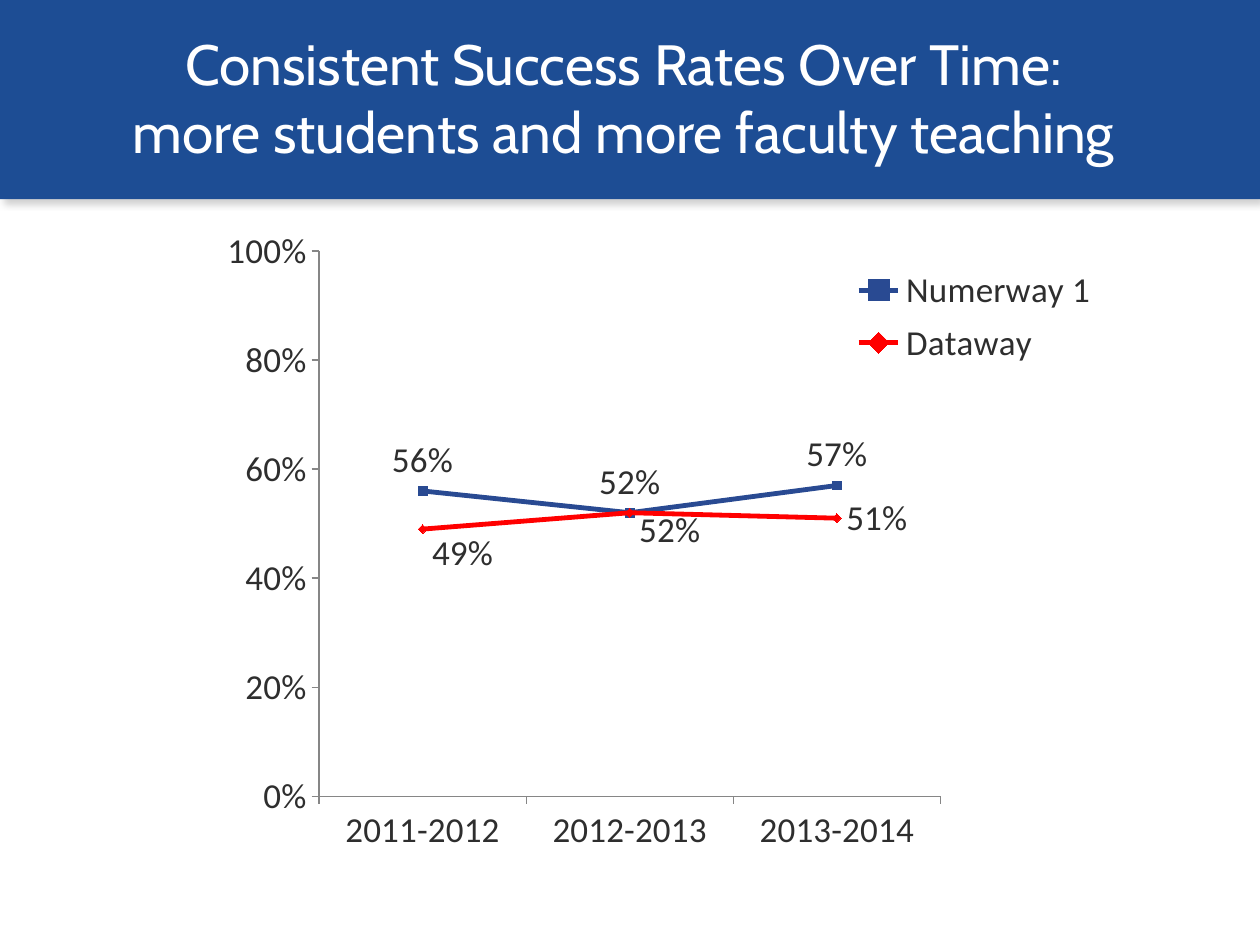
from dataclasses import dataclass

from lxml.etree import SubElement
from pptx import Presentation
from pptx.chart.data import CategoryChartData
from pptx.dml.color import RGBColor
from pptx.enum.chart import XL_CHART_TYPE as ChartType
from pptx.enum.chart import XL_LABEL_POSITION as LabelPos
from pptx.enum.chart import XL_LEGEND_POSITION as LegendPos
from pptx.enum.chart import XL_TICK_MARK as Tick
from pptx.enum.shapes import MSO_SHAPE as Shape
from pptx.enum.text import MSO_ANCHOR as Anchor
from pptx.enum.text import PP_ALIGN as Align
from pptx.oxml import parse_xml
from pptx.oxml.ns import nsdecls, qn
from pptx.util import Inches, Pt

BLUE = RGBColor(0x1D, 0x4D, 0x94)
LINE_BLUE = RGBColor(0x29, 0x4A, 0x92)
RED = RGBColor(0xFF, 0x00, 0x00)
INK = RGBColor(0x2E, 0x2E, 0x2E)
GREY = RGBColor(0x86, 0x86, 0x86)
WHITE = RGBColor(0xFF, 0xFF, 0xFF)

TITLE = ("Consistent Success Rates Over Time:", "more students and more faculty teaching")
YEARS = ("2011-2012", "2012-2013", "2013-2014")
TEXT_SIZE = Pt(20)


@dataclass(frozen=True)
class Rate:
    name: str
    values: tuple[float, ...]
    color: RGBColor
    label_pos: LabelPos
    label_drops: tuple[float, ...] = ()


RATES = (
    Rate("Numerway 1", (0.56, 0.52, 0.57), LINE_BLUE, LabelPos.ABOVE),
    Rate("Dataway", (0.49, 0.52, 0.51), RED, LabelPos.RIGHT, (0.037, 0.026)),
)


def add_layout(parent, index: int, **parts: str | float) -> None:
    for old in parent.findall(qn("c:layout")):
        parent.remove(old)
    layout = parse_xml(f"<c:layout {nsdecls('c')}/>")
    manual = SubElement(layout, qn("c:manualLayout"))
    for tag, value in parts.items():
        SubElement(manual, qn(f"c:{tag}")).set("val", str(value))
    parent.insert(index, layout)


def add_banner(s) -> None:
    sp = s.shapes.add_shape(Shape.RECTANGLE, 0, 0, Inches(10), Inches(1.58))
    sp.shadow.inherit = False
    sp.fill.solid()
    sp.fill.fore_color.rgb = BLUE
    sp.line.fill.background()
    effects = sp._element.spPr.find(qn("a:effectLst"))
    effects.append(parse_xml(
        f'<a:outerShdw {nsdecls("a")} blurRad="{Pt(4.5)}" dist="{Pt(3)}" dir="2700000" rotWithShape="0">'
        '<a:srgbClr val="000000"><a:alpha val="18000"/></a:srgbClr></a:outerShdw>'))


def add_title(s) -> None:
    tf = s.shapes.add_textbox(Inches(0.5), Inches(0.3), Inches(9), Inches(1.03)).text_frame
    tf.word_wrap = True
    tf.vertical_anchor = Anchor.BOTTOM
    tf.margin_left, tf.margin_right = Inches(0.1), Inches(0.2)
    tf.margin_top, tf.margin_bottom = 0, Inches(0.02)
    p = tf.paragraphs[0]
    p.text = "\v".join(TITLE)
    p.alignment = Align.CENTER
    p.font.name, p.font.size = "Cabin", Pt(32.4)
    p.font.color.rgb = WHITE


def style_axis(axis) -> None:
    axis.has_major_gridlines = False
    axis.major_tick_mark, axis.minor_tick_mark = Tick.OUTSIDE, Tick.NONE
    axis.tick_labels.font.size = TEXT_SIZE
    axis.format.line.color.rgb = GREY
    axis.format.line.width = Pt(0.75)


def style_series(series, rate: Rate) -> None:
    series.smooth = False
    series.marker.style = None
    series.format.line.color.rgb = rate.color
    series.format.line.width = Pt(2.75)
    labels = series.data_labels
    labels.show_value = True
    labels.number_format, labels.number_format_is_linked = "0%", False
    labels.position = rate.label_pos
    labels.font.size = TEXT_SIZE
    for i, drop in enumerate(rate.label_drops):
        label = series.points[i].data_label
        label.position = rate.label_pos
        label.font.size = TEXT_SIZE
        add_layout(labels._element.findall(qn("c:dLbl"))[i], 1, x=0, y=drop)


def add_rates_chart(s) -> None:
    data = CategoryChartData(number_format="0%")
    data.categories = YEARS
    for rate in RATES:
        data.add_series(rate.name, rate.values)
    chart = s.shapes.add_chart(
        ChartType.LINE, Inches(0.58), Inches(1.75), Inches(9), Inches(5.17), data).chart
    chart.has_title = False
    chart.font.name, chart.font.size = "Calibri", Pt(10)
    chart.font.color.rgb = INK
    plot = chart.plots[0]
    plot.vary_by_categories = False
    for series, rate in zip(plot.series, RATES):
        style_series(series, rate)

    style_axis(chart.category_axis)
    axis = chart.value_axis
    style_axis(axis)
    axis.minimum_scale, axis.maximum_scale, axis.major_unit = 0, 1, 0.2
    axis.tick_labels.number_format = "0%"
    axis.tick_labels.number_format_is_linked = False

    chart.has_legend = True
    legend = chart.legend
    legend.position = LegendPos.RIGHT
    legend.include_in_layout = False
    legend.font.size = TEXT_SIZE
    add_layout(legend._element, 1, xMode="edge", yMode="edge", x=0.69, y=0.06, w=0.21, h=0.175)
    add_layout(chart._chartSpace.chart.plotArea, 0, layoutTarget="inner",
               xMode="edge", yMode="edge", x=0.217, y=0.047, w=0.548, h=0.837)


def main() -> None:
    prs = Presentation()
    prs.slide_width, prs.slide_height = Inches(10), Inches(7.5)
    s = prs.slides.add_slide(prs.slide_layouts[6])
    add_banner(s)
    add_title(s)
    add_rates_chart(s)
    prs.save("out.pptx")


if __name__ == "__main__":
    main()
